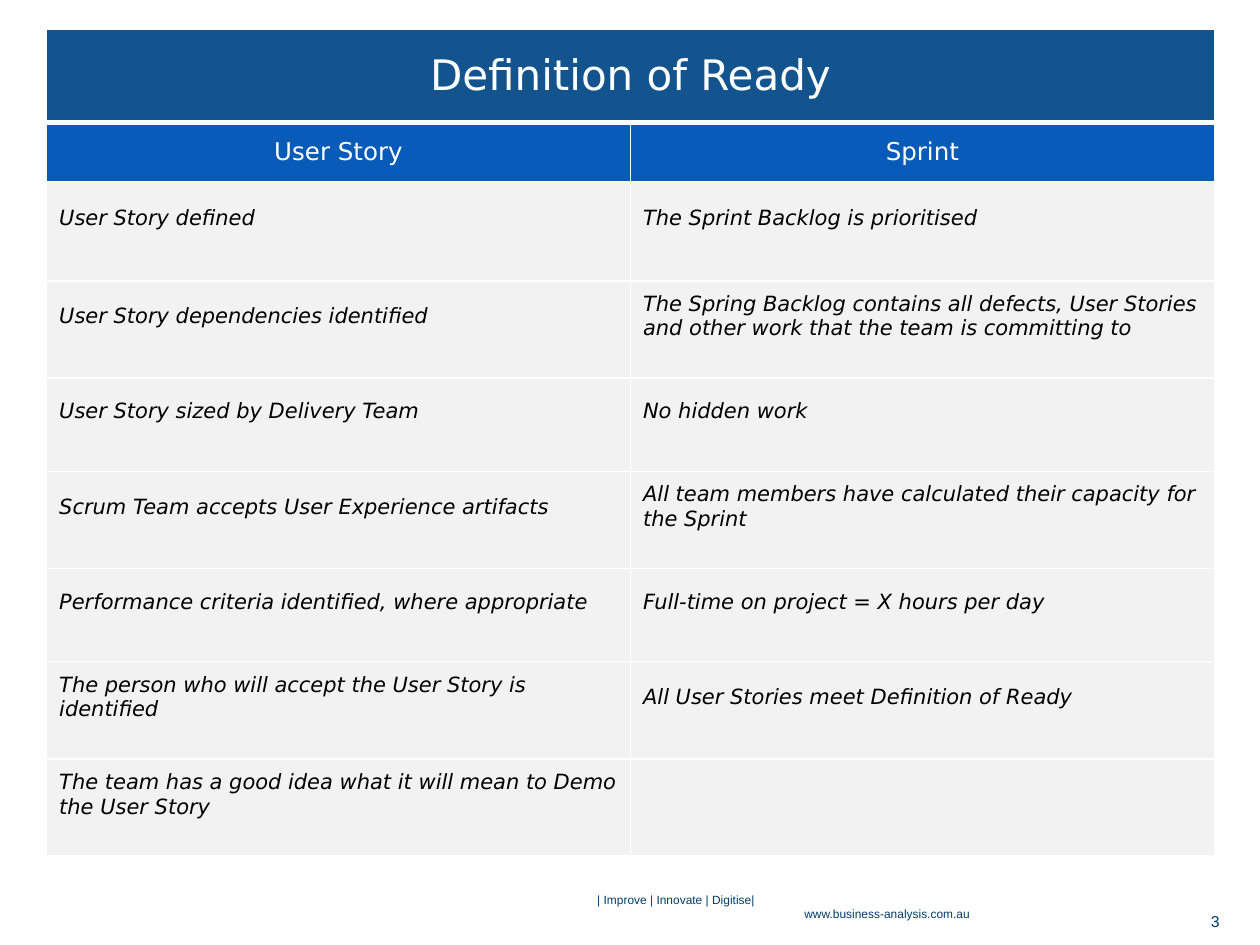
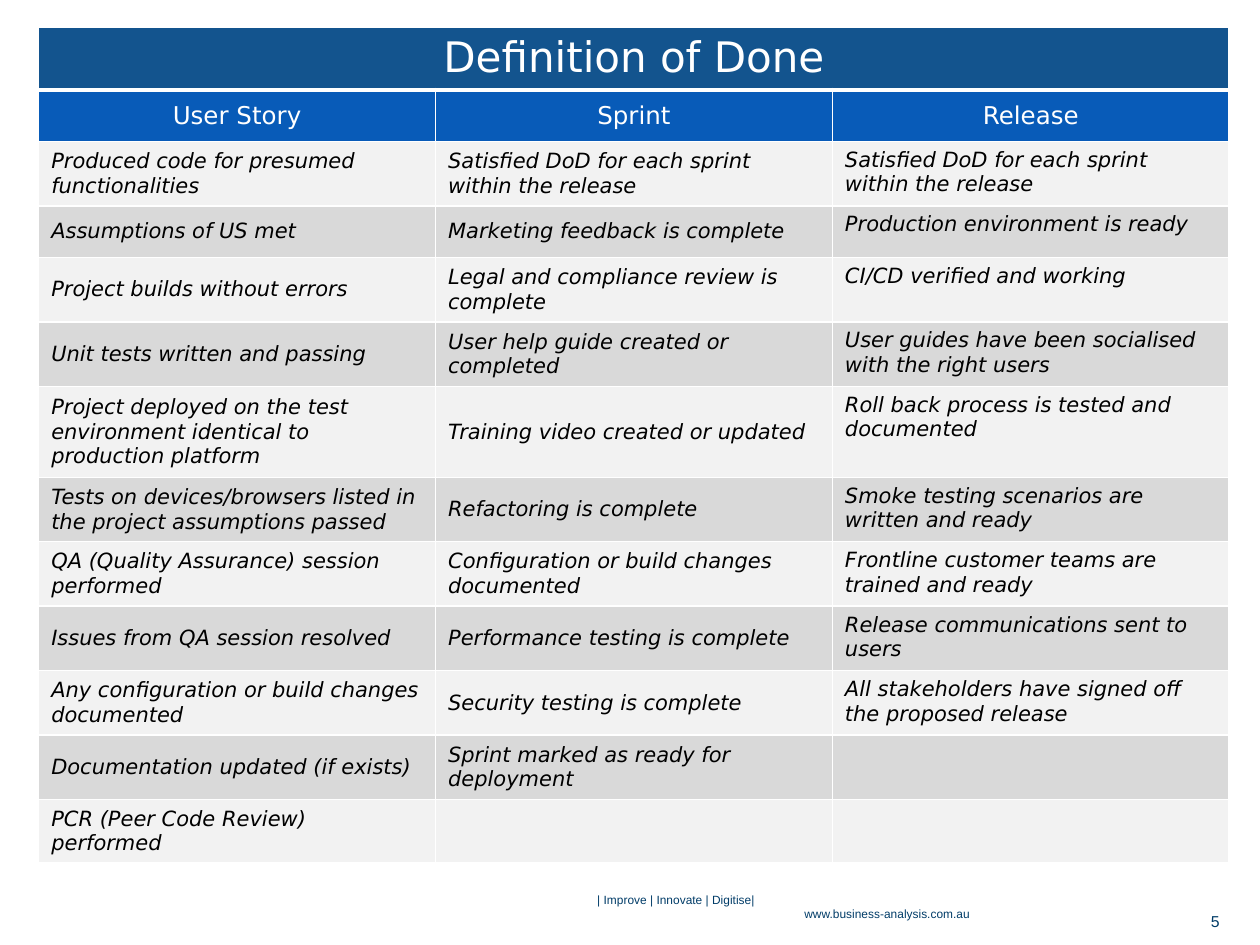
from lxml import etree
from pptx import Presentation
from pptx import util as u
from pptx.dml.color import RGBColor
from pptx.enum import text as t
from pptx.oxml import ns

TITLE_BLUE, HEADER_BLUE = "13548E", "085BB8"
LIGHT, GREY = "F2F2F2", "D9D9D9"
WHITE, BLACK, NAVY = "FFFFFF", "000000", "003C68"
TABLE_FONT, FOOTER_FONT = "DejaVu Sans", "Arial"
LEFT, CENTER, JUSTIFY = t.PP_ALIGN.LEFT, t.PP_ALIGN.CENTER, t.PP_ALIGN.JUSTIFY
TOP, MIDDLE = t.MSO_ANCHOR.TOP, t.MSO_ANCHOR.MIDDLE

READY_ROWS = [
    ("User Story defined", "The Sprint Backlog is prioritised"),
    ("User Story dependencies identified",
     "The Spring Backlog contains all defects, User Stories and other work "
     "that the team is committing to"),
    ("User Story sized by Delivery Team", "No hidden work"),
    ("Scrum Team accepts User Experience artifacts",
     "All team members have calculated their capacity for the Sprint"),
    ("Performance criteria identified, where appropriate",
     "Full-time on project = X hours per day"),
    ("The person who will accept the User Story is identified",
     "All User Stories meet Definition of Ready"),
    ("The team has a good idea what it will mean to Demo the User Story", ""),
]
DONE_ROWS = [
    ("Produced code for presumed functionalities",
     "Satisfied DoD for each sprint within the release",
     "Satisfied DoD for each sprint within the release"),
    ("Assumptions of US met", "Marketing feedback is complete",
     "Production environment is ready"),
    ("Project builds without errors", "Legal and compliance review is complete",
     "CI/CD verified and working"),
    ("Unit tests written and passing", "User help guide created or completed",
     "User guides have been socialised with the right users"),
    ("Project deployed on the test environment identical to production platform",
     "Training video created or updated",
     "Roll back process is tested and documented"),
    ("Tests on devices/browsers listed in the project assumptions passed",
     "Refactoring is complete", "Smoke testing scenarios are written and ready"),
    ("QA (Quality Assurance) session performed",
     "Configuration or build changes documented",
     "Frontline customer teams are trained and ready"),
    ("Issues from QA session resolved", "Performance testing is complete",
     "Release communications sent to users"),
    ("Any configuration or build changes documented", "Security testing is complete",
     "All stakeholders have signed off the proposed release"),
    ("Documentation updated (if exists)", "Sprint marked as ready for deployment", ""),
    ("PCR (Peer Code Review) performed", "", ""),
]


def color(code):
    return RGBColor.from_string(code)


def write(para, text, size, font=TABLE_FONT, ink=WHITE, italic=False, align=LEFT):
    para.alignment = align
    span = para.add_run()
    span.text = text
    span.font.name, span.font.size = font, u.Pt(size)
    span.font.bold, span.font.italic = False, italic
    span.font.color.rgb = color(ink)


def add_text(page, left, top, width, height, lines, size):
    """Add a footer text box; lines are (text, alignment) pairs."""
    box = page.shapes.add_textbox(u.Cm(left), u.Cm(top), u.Cm(width), u.Cm(height))
    frame = box.text_frame
    frame.word_wrap = True
    for index, (text, align) in enumerate(lines):
        para = frame.add_paragraph() if index else frame.paragraphs[0]
        write(para, text, size, FOOTER_FONT, NAVY, align=align)


def add_footer(page, number):
    add_text(page, 11.79, 17.86, 12.19, 0.84,
             [("| Improve | Innovate | Digitise|", JUSTIFY),
              ("www.business-analysis.com.au", CENTER)], 6.8)
    add_text(page, 24.16, 18.26, 0.91, 0.64, [(number, LEFT)], 9)


def set_borders(cell, top=1, bottom=1):
    props = cell._tc.get_or_add_tcPr()
    for side, points in (("L", 1), ("R", 1), ("T", top), ("B", bottom)):
        line = etree.SubElement(props, ns.qn(f"a:ln{side}"), w=str(u.Pt(points)))
        fill = etree.SubElement(line, ns.qn("a:solidFill"))
        etree.SubElement(fill, ns.qn("a:srgbClr"), val=WHITE)


def fill_cell(cell, text, fill, anchor=MIDDLE, top=1, bottom=1, **style):
    set_borders(cell, top, bottom)
    cell.fill.solid()
    cell.fill.fore_color.rgb = color(fill)
    cell.vertical_anchor = anchor
    if text:
        write(cell.text_frame.paragraphs[0], text, **style)


def add_checklist(page, left, top, column_width, heights, title, headers, rows,
                  bands, anchors, bottom_margin=0.13):
    """Add a table with a title row, a header row and banded body rows."""
    count = len(headers)
    table = page.shapes.add_table(
        len(heights), count, u.Cm(left), u.Cm(top),
        u.Cm(column_width * count), u.Cm(sum(heights))).table
    table.first_row = table.horz_banding = False
    for column in table.columns:
        column.width = u.Cm(column_width)
    for row, height in zip(table.rows, heights):
        row.height = u.Cm(height)

    table.cell(0, 0).merge(table.cell(0, count - 1))
    for index, header in enumerate(headers):
        fill_cell(table.cell(0, index), "" if index else title, TITLE_BLUE,
                  bottom=3, size=24, align=CENTER)
        fill_cell(table.cell(1, index), header, HEADER_BLUE,
                  top=3, size=14, align=CENTER)
    for number, texts in enumerate(rows):
        for index, text in enumerate(texts):
            cell = table.cell(number + 2, index)
            cell.margin_bottom = u.Cm(bottom_margin)
            fill_cell(cell, text, bands[number % len(bands)], anchors[index],
                      size=12, ink=BLACK, italic=True)


def main():
    deck = Presentation()
    deck.slide_width, deck.slide_height = u.Cm(25.4), u.Cm(19.05)
    blank = deck.slide_layouts[6]

    ready = deck.slides.add_slide(blank)
    add_footer(ready, "3")
    add_checklist(ready, 0.94, 0.59, 11.77,
                  [1.88, 1.19, 2, 1.96, 1.88, 1.96, 1.88, 1.96, 1.96],
                  "Definition of Ready", ["User Story", "Sprint"], READY_ROWS,
                  [LIGHT], [MIDDLE, MIDDLE], bottom_margin=0.65)

    done = deck.slides.add_slide(blank)
    add_footer(done, "5")
    add_checklist(done, 0.78, 0.54, 8,
                  [1.25, 1.04, 1.3, 1.04, 1.3, 1.3, 1.83] + [1.3] * 5 + [1.25],
                  "Definition of Done", ["User Story", "Sprint", "Release"], DONE_ROWS,
                  [LIGHT, GREY], [MIDDLE, MIDDLE, TOP])

    deck.save("out.pptx")


if __name__ == "__main__":
    main()
